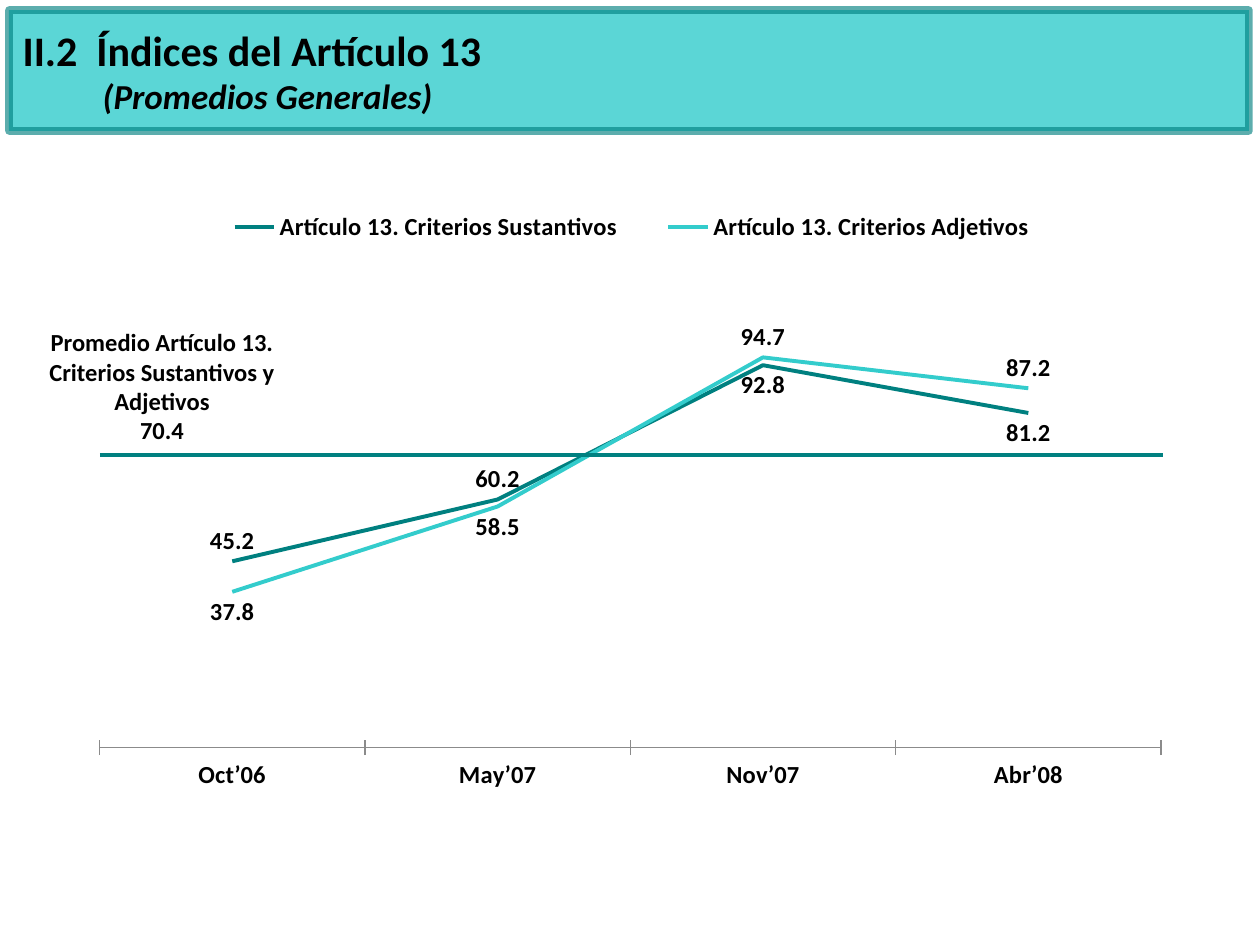
import pptx
import pptx.chart.data
import pptx.dml.color
import pptx.enum.chart
import pptx.enum.shapes
import pptx.enum.text
import pptx.util
from pptx.oxml import parse_xml
from pptx.oxml.ns import nsdecls, qn

# Content
TITLE = [("II.2  Índices del Artículo 13", 24, False, 0),
         ("(Promedios Generales)", 20, True, 80)]
AVERAGE = ["Promedio Artículo 13. Criterios Sustantivos y Adjetivos", "70.4"]
PERIODS = ["Oct’06", "May’07", "Nov’07", "Abr’08"]
SERIES = [  # name, values, colour, label side for each point
    ("Artículo 13. Criterios Sustantivos", (45.2, 60.2, 92.8, 81.2), "teal", "ttbb"),
    ("Artículo 13. Criterios Adjetivos", (37.8, 58.5, 94.7, 87.2), "aqua", "bbtt"),
]
COLORS = {"teal": "008080", "aqua": "33CCCC", "black": "000000", "axis": "8B8B8B"}
FONT = "Calibri"

# Places in px: left, top, width, height
BAND = (9, 10, 1240, 121)
TITLE_BOX = (10, 11, 1155, 119)
CHART = (82, 175, 1100, 645)
AVERAGE_BOX = (34, 321, 256, 131)
AVERAGE_LINE = (100, 455, 1163, 455)
LEGEND_AREA = (0.1, 0.04, 0.8, 0.08)
PLOT_AREA = (0.016, 0.249, 0.965, 0.639)


def px(n):
    return pptx.util.Emu(round(n * 914400 / 126))


def place(box):
    return [px(n) for n in box]


def rgb(name):
    return pptx.dml.color.RGBColor.from_string(COLORS[name])


def style(font, size, italic=None):
    font.name = FONT
    font.size = pptx.util.Pt(size)
    font.bold = True
    font.italic = italic
    font.color.rgb = rgb("black")


def set_alpha(fill_parent, percent):
    color = fill_parent.find(qn("a:solidFill"))[0]
    color.append(parse_xml(f'<a:alpha {nsdecls("a")} val="{percent * 1000}"/>'))


def layout_xml(area, inner=False):
    target = '<c:layoutTarget val="inner"/>' if inner else ""
    modes = '<c:xMode val="edge"/><c:yMode val="edge"/>'
    sizes = "".join(f'<c:{k} val="{v}"/>' for k, v in zip("xywh", area))
    return parse_xml(f'<c:layout {nsdecls("c")}><c:manualLayout>{target}{modes}{sizes}'
                     '</c:manualLayout></c:layout>')


prs = pptx.Presentation()
prs.slide_width, prs.slide_height = px(1260), px(945)
s = prs.slides.add_slide(prs.slide_layouts[5])

# Title over its band
title = s.shapes.title
band = s.shapes.add_shape(pptx.enum.shapes.MSO_SHAPE.RECTANGLE, *place(BAND))
title.element.addprevious(band.element)
band.shadow.inherit = False
band.fill.solid()
band.fill.fore_color.rgb = rgb("aqua")
band.line.color.rgb = rgb("teal")
band.line.width = pptx.util.Pt(4.33)
set_alpha(band.element.spPr, 80)
set_alpha(band.element.spPr.find(qn("a:ln")), 64)

title.left, title.top, title.width, title.height = place(TITLE_BOX)
tf = title.text_frame
tf.word_wrap = True
tf.auto_size = pptx.enum.text.MSO_AUTO_SIZE.NONE
tf.vertical_anchor = pptx.enum.text.MSO_ANCHOR.MIDDLE
for i, (text, size, italic, indent) in enumerate(TITLE):
    p = tf.add_paragraph() if i else tf.paragraphs[0]
    p.alignment = pptx.enum.text.PP_ALIGN.LEFT
    p._p.get_or_add_pPr().set("marL", str(px(indent)))
    r = p.add_run()
    r.text = text
    style(r.font, size, italic)

# Line chart
data = pptx.chart.data.CategoryChartData(number_format="0.0")
data.categories = PERIODS
for name, values, _, _ in SERIES:
    data.add_series(name, values)
chart = s.shapes.add_chart(pptx.enum.chart.XL_CHART_TYPE.LINE, *place(CHART), data).chart
chart.has_title = False
style(chart.font, 14)
chart.has_legend = True
chart.legend.position = pptx.enum.chart.XL_LEGEND_POSITION.TOP
chart.legend.include_in_layout = False
legend = chart.legend._element
for old in legend.findall(qn("c:layout")):
    legend.remove(old)
legend.find(qn("c:legendPos")).addnext(layout_xml(LEGEND_AREA))
plot_area = chart._chartSpace.chart.plotArea
for old in plot_area.findall(qn("c:layout")):
    plot_area.remove(old)
plot_area.insert(0, layout_xml(PLOT_AREA, inner=True))

value_axis = chart.value_axis
value_axis.minimum_scale, value_axis.maximum_scale = 0, 100
value_axis.has_major_gridlines = False
value_axis.visible = False
category_axis = chart.category_axis
category_axis.major_tick_mark = pptx.enum.chart.XL_TICK_MARK.CROSS
category_axis.format.line.color.rgb = rgb("axis")
category_axis.format.line.width = pptx.util.Pt(0.75)

plot = chart.plots[0]
plot.vary_by_categories = False
SIDES = {"t": pptx.enum.chart.XL_LABEL_POSITION.ABOVE,
         "b": pptx.enum.chart.XL_LABEL_POSITION.BELOW}
for series, (_, _, color, sides) in zip(plot.series, SERIES):
    series.smooth = False
    series.marker.style = pptx.enum.chart.XL_MARKER_STYLE.NONE
    series.format.line.color.rgb = rgb(color)
    series.format.line.width = pptx.util.Pt(2.25)
    labels = series.data_labels
    labels.show_value = True
    labels.number_format, labels.number_format_is_linked = "0.0", False
    labels.position = SIDES[sides[0]]
    style(labels.font, 14)
    for i, side in enumerate(sides):
        if side != sides[0]:
            label = series.points[i].data_label
            style(label.font, 14)
            label.position = SIDES[side]

# Overall average line
line = s.shapes.add_connector(pptx.enum.shapes.MSO_CONNECTOR.STRAIGHT, *place(AVERAGE_LINE))
line.line.color.rgb = rgb("teal")
line.line.width = pptx.util.Pt(2)
line.element.spPr.append(parse_xml(f'<a:effectLst {nsdecls("a")}/>'))

# Average caption
tf = s.shapes.add_textbox(*place(AVERAGE_BOX)).text_frame
tf.word_wrap = True
for i, text in enumerate(AVERAGE):
    p = tf.add_paragraph() if i else tf.paragraphs[0]
    p.alignment = pptx.enum.text.PP_ALIGN.CENTER
    r = p.add_run()
    r.text = text
    style(r.font, 14)

prs.save("out.pptx")
